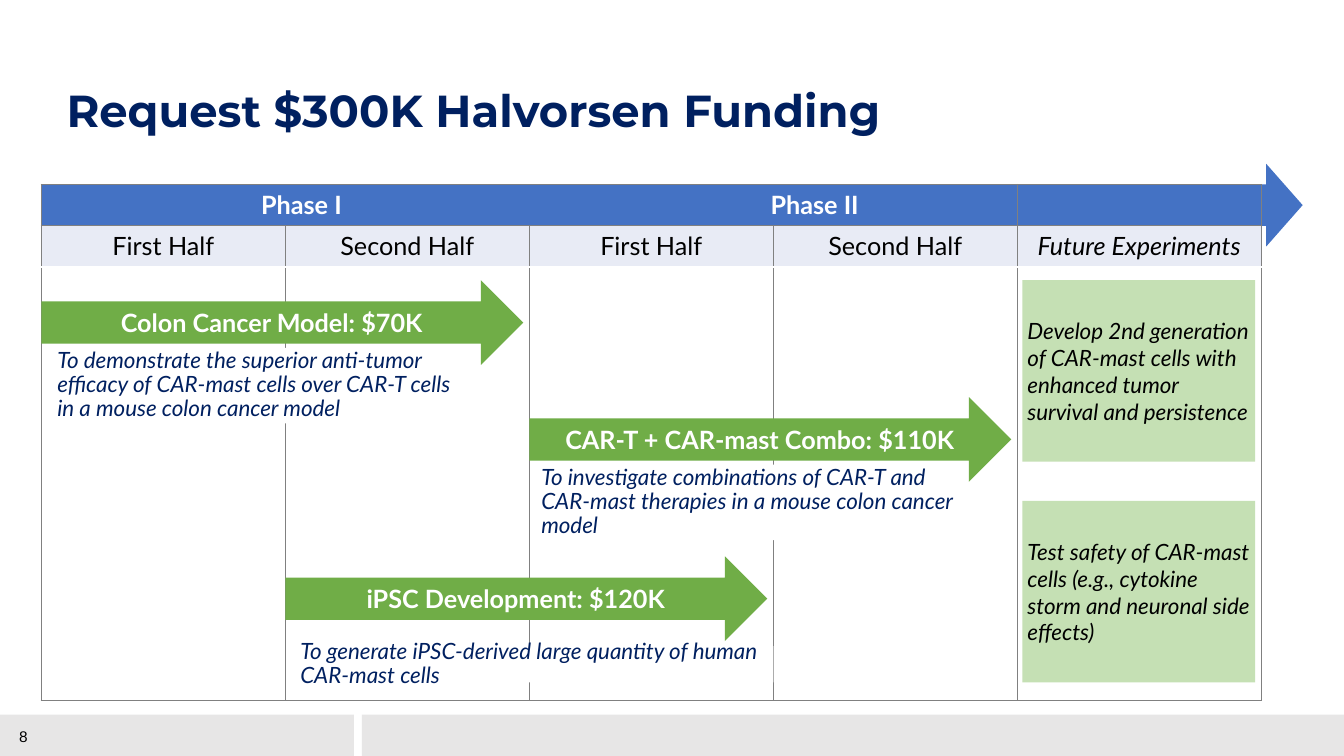
from pptx import Presentation
from pptx.dml.color import RGBColor
from pptx.enum.shapes import MSO_SHAPE
from pptx.enum.text import MSO_ANCHOR, PP_ALIGN
from pptx.oxml import parse_xml
from pptx.oxml.ns import nsdecls
from pptx.util import Inches, Pt

RECT, ARROW = MSO_SHAPE.RECTANGLE, MSO_SHAPE.RIGHT_ARROW
LEFT_ALIGN, CENTER = PP_ALIGN.LEFT, PP_ALIGN.CENTER
MIDDLE = MSO_ANCHOR.MIDDLE

NAVY = RGBColor(0x00, 0x20, 0x60)
BLUE = RGBColor(0x44, 0x72, 0xC4)
GREEN = RGBColor(0x70, 0xAD, 0x47)
PALE_GREEN = RGBColor(0xC5, 0xE0, 0xB4)
LAVENDER = RGBColor(0xE8, 0xEB, 0xF5)
LIGHT_GRAY = RGBColor(0xE7, 0xE6, 0xE6)
GRAY = RGBColor(0x80, 0x80, 0x80)
WHITE = RGBColor(0xFF, 0xFF, 0xFF)
BLACK = RGBColor(0x00, 0x00, 0x00)

SLIDE_W, SLIDE_H = 13.33, 7.5
LEFT, TOP = 0.41, 1.83              # corner of the timeline grid
COL, ROWS = 2.42, (0.41, 0.41, 4.3)
BODY_TOP = TOP + ROWS[0] + ROWS[1]
INSET = 0.05

HALVES = ["First Half", "Second Half"] * 2 + ["Future Experiments"]
# first column, offset in body row, label, description, description box in the bar
BARS = [
    (0, 0.13, "Colon Cancer Model: $70K",
     "To demonstrate the superior anti-tumor efficacy of CAR-mast cells "
     "over CAR-T cells in a mouse colon cancer model", (0.06, 0.67, 4.2, 0.75)),
    (2, 1.29, "CAR-T + CAR-mast Combo: $110K",
     "To investigate combinations of CAR-T and CAR-mast therapies "
     "in a mouse colon cancer model", (0.02, 0.67, 4.29, 0.75)),
    (1, 2.87, "iPSC Development: $120K",
     "To generate iPSC-derived large quantity of human CAR-mast cells",
     (0.05, 0.89, 4.79, 0.36)),
]
FUTURE = [
    "Develop 2nd generation of CAR-mast cells with enhanced tumor "
    "survival and persistence",
    "Test safety of CAR-mast cells (e.g., cytokine storm and neuronal side effects)",
]


def style(p, size, color, bold=False, italic=False, name="Lato"):
    f = p.font
    f.name, f.size, f.bold, f.italic = name, Pt(size), bold, italic
    f.color.rgb = color


def set_margins(frame, side=INSET):
    frame.margin_left = frame.margin_right = Inches(side)
    frame.margin_top = frame.margin_bottom = Inches(INSET)


def add_block(s, kind, box, fill, text="", align=LEFT_ALIGN, side=INSET, **font):
    sp = s.shapes.add_shape(kind, *map(Inches, box))
    sp.shadow.inherit = False
    sp.fill.solid()
    sp.fill.fore_color.rgb = fill
    sp.line.fill.background()
    if text:
        tf = sp.text_frame
        tf.word_wrap, tf.vertical_anchor = True, MIDDLE
        set_margins(tf, side)
        p = tf.paragraphs[0]
        p.text, p.alignment = text, align
        style(p, **font)
    return sp


def set_borders(cell, **colors):
    """Give each named side (L, R, T, B) a 1 pt line, ahead of the cell fill."""
    tc_pr = cell._tc.get_or_add_tcPr()
    sides = [side for side in "LRTB" if side in colors]
    for i, side in enumerate(sides):
        tc_pr.insert(i, parse_xml(
            f'<a:ln{side} {nsdecls("a")} w="12700"><a:solidFill>'
            f'<a:srgbClr val="{colors[side]}"/></a:solidFill></a:ln{side}>'))


def add_title(s, box):
    title = s.shapes.title
    title.left, title.top, title.width, title.height = map(Inches, box)
    tf = title.text_frame
    tf.word_wrap, tf.vertical_anchor = True, MIDDLE
    set_margins(tf)
    p = tf.paragraphs[0]
    p.text, p.alignment, p.line_spacing = "Request $300K Halvorsen Funding", LEFT_ALIGN, 0.9
    style(p, 32, NAVY, bold=True, name="Montserrat")


def add_footer(s, top, number):
    height = SLIDE_H - top
    for left, right in ((3.59, SLIDE_W), (0, 3.51)):
        add_block(s, RECT, (left, top, right - left, height), LIGHT_GRAY)
    tf = s.shapes.add_textbox(*map(Inches, (0.14, top + 0.07, 0.3, 0.26))).text_frame
    set_margins(tf)
    p = tf.paragraphs[0]
    p.text = number
    style(p, 11, BLACK, name="Arial")


def add_grid(s, left, top):
    # Blue time arrow behind the header row
    band = ROWS[0]
    arrow = add_block(s, ARROW, (left, top - band / 2, 12.51, 2 * band), BLUE)
    arrow.adjustments[1] = 0.44

    n = len(HALVES)
    tbl = s.shapes.add_table(len(ROWS), n, *map(
        Inches, (left, top, n * COL, sum(ROWS)))).table
    tbl.first_row = tbl.horz_banding = False
    for column in tbl.columns:
        column.width = Inches(COL)
    for row, height in zip(tbl.rows, ROWS):
        row.height = Inches(height)

    for c, half in enumerate(HALVES):
        phase, head, body = (tbl.cell(r, c) for r in range(len(ROWS)))
        for cell, fill in ((phase, BLUE), (head, LAVENDER)):
            cell.fill.solid()
            cell.fill.fore_color.rgb = fill
            set_margins(cell)
        body.fill.background()
        set_borders(phase, L=GRAY, R=GRAY, T=GRAY, B=GRAY)
        set_borders(head, L=GRAY, R=GRAY, T=GRAY, B=WHITE)
        set_borders(body, L=GRAY, R=GRAY, T=WHITE, B=GRAY)
        p = head.text_frame.paragraphs[0]
        p.text, p.alignment = half, CENTER
        style(p, 18, BLACK, italic=c == n - 1)

    # Both phase names share one merged cell, set on centred tabs
    tbl.cell(0, 0).merge(tbl.cell(0, n - 2))
    p = tbl.cell(0, 0).text_frame.paragraphs[0]
    p.text = "\tPhase I\tPhase II"
    tabs = "".join(f'<a:tab pos="{Inches(x)}" algn="ctr"/>' for x in (2.53, 7.62))
    p._p.get_or_add_pPr().append(
        parse_xml(f'<a:tabLst {nsdecls("a")}>{tabs}</a:tabLst>'))
    style(p, 18, WHITE, bold=True)


def add_bar(s, left, top, label, description, note_box):
    add_block(s, ARROW, (left, top, 4.78, 0.84), GREEN, label, CENTER,
              size=18, color=WHITE, bold=True)
    dx, dy, width, height = note_box
    note = add_block(s, RECT, (left + dx, top + dy, width, height), WHITE, description,
                     side=2 * INSET, size=16, color=NAVY, italic=True)
    note.text_frame.paragraphs[0].line_spacing = 0.9


def add_future(s, left, top):
    for i, text in enumerate(FUTURE):
        add_block(s, RECT, (left, top + i * 2.19, 2.31, 1.8), PALE_GREEN, text,
                  size=16, color=BLACK, italic=True)


def main():
    prs = Presentation()
    prs.slide_width, prs.slide_height = Inches(SLIDE_W), Inches(SLIDE_H)
    s = prs.slides.add_slide(prs.slide_layouts[5])
    add_footer(s, 7.09, "8")
    add_title(s, (0.61, 0.12, 11.63, 2))
    add_grid(s, LEFT, TOP)
    for col, dy, label, description, note_box in BARS:
        add_bar(s, LEFT + col * COL, BODY_TOP + dy, label, description, note_box)
    add_future(s, LEFT + 4 * COL + INSET, BODY_TOP + 0.13)
    prs.save("out.pptx")


if __name__ == "__main__":
    main()
